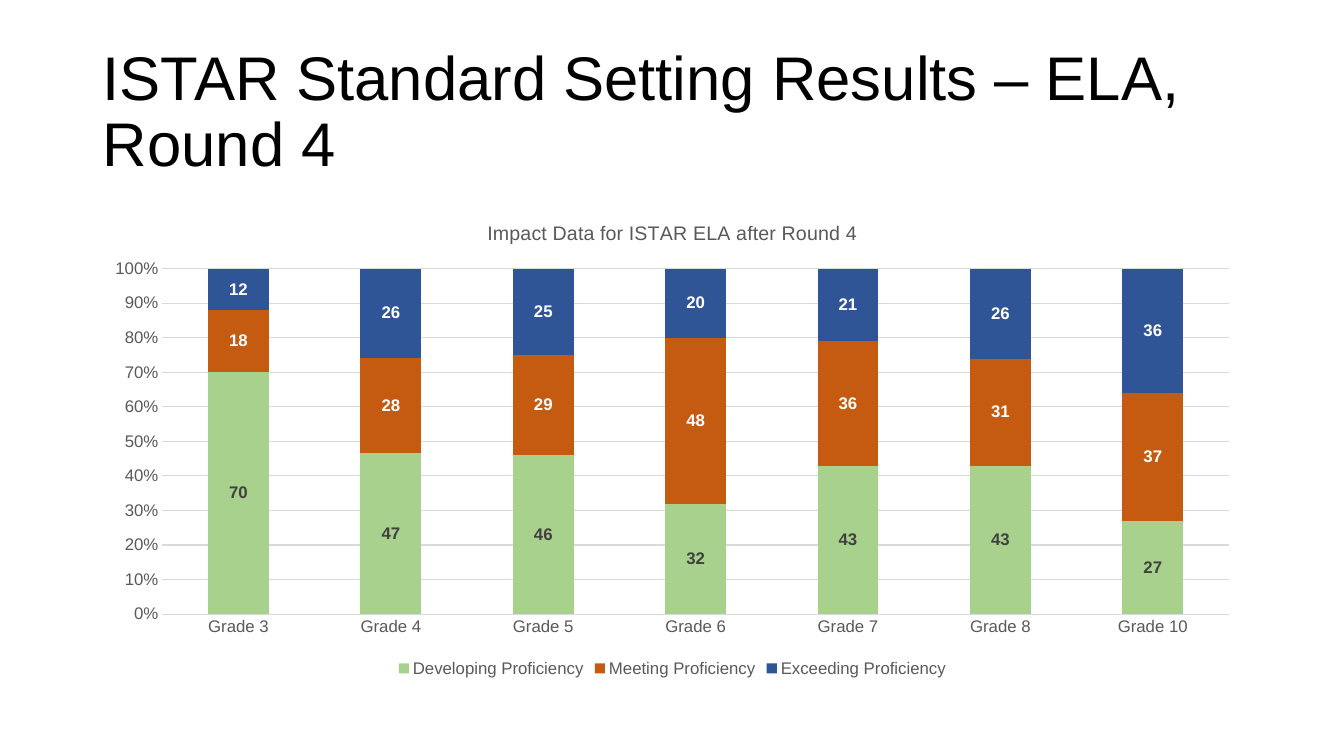
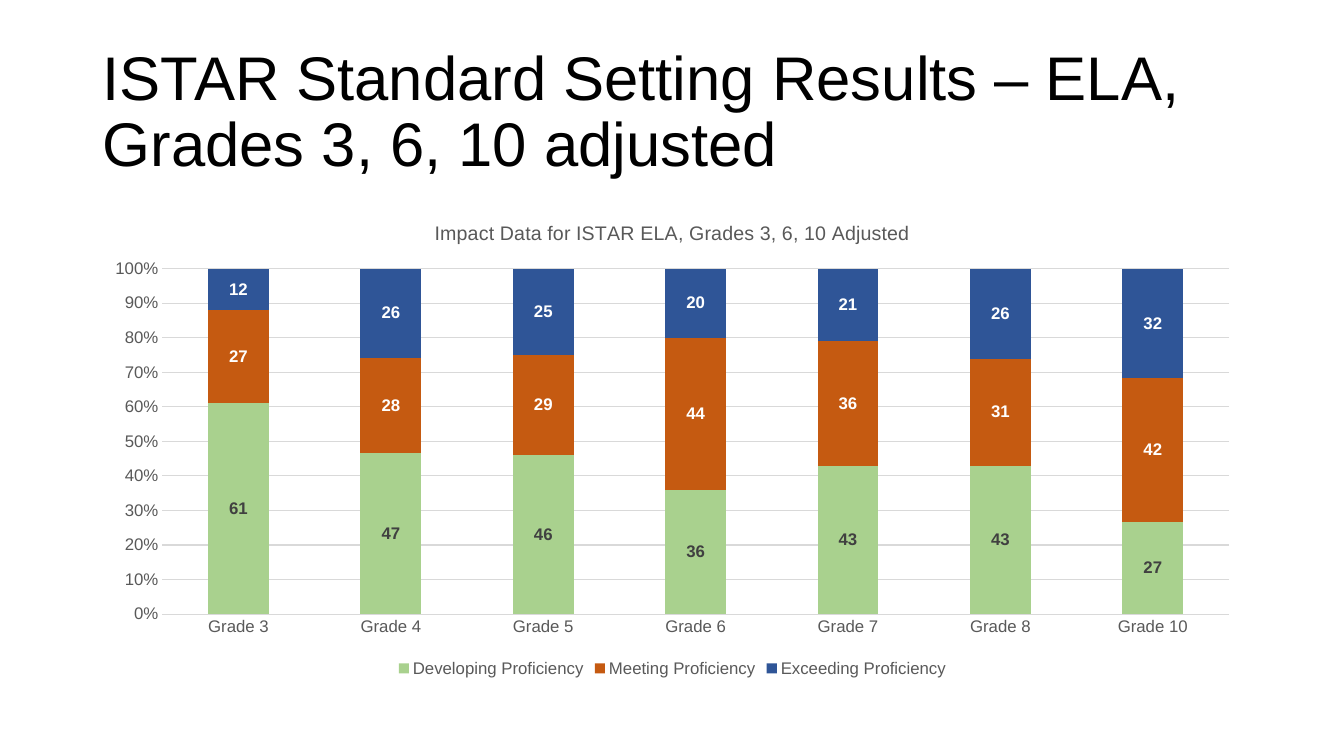
import lxml.etree
import pptx
import pptx.chart.data
import pptx.dml.color
import pptx.enum.chart
import pptx.enum.text
import pptx.oxml.ns
import pptx.util

Inches = pptx.util.Inches
Pt = pptx.util.Pt
RGBColor = pptx.dml.color.RGBColor

FONT = "Arial"
BLACK = RGBColor(0x00, 0x00, 0x00)
WHITE = RGBColor(0xFF, 0xFF, 0xFF)
DARK_GRAY = RGBColor(0x40, 0x40, 0x40)
TEXT_GRAY = RGBColor(0x59, 0x59, 0x59)
LINE_GRAY = RGBColor(0xD9, 0xD9, 0xD9)
GREEN = RGBColor(0xA9, 0xD1, 0x8E)
ORANGE = RGBColor(0xC5, 0x5A, 0x11)
BLUE = RGBColor(0x2F, 0x55, 0x97)

LEFT, WIDTH = Inches(0.92), Inches(11.5)
GRADES = [f"Grade {grade}" for grade in (3, 4, 5, 6, 7, 8, 10)]
LEVELS = [  # name, fill colour, label colour
    ("Developing Proficiency", GREEN, DARK_GRAY),
    ("Meeting Proficiency", ORANGE, WHITE),
    ("Exceeding Proficiency", BLUE, WHITE),
]
RESULTS = [  # slide title, chart title, values by level
    (
        "ISTAR Standard Setting Results – ELA, Round 4",
        "Impact Data for ISTAR ELA after Round 4",
        [
            (70, 47, 46, 32, 43, 43, 27),
            (18, 28, 29, 48, 36, 31, 37),
            (12, 26, 25, 20, 21, 26, 36),
        ],
    ),
    (
        "ISTAR Standard Setting Results – ELA, Grades 3, 6, 10 adjusted",
        "Impact Data for ISTAR ELA, Grades 3, 6, 10 Adjusted",
        [
            (61, 47, 46, 36, 43, 43, 27),
            (27, 28, 29, 44, 36, 31, 42),
            (12, 26, 25, 20, 21, 26, 32),
        ],
    ),
]


def set_font(font, size, color, bold=False):
    font.name = FONT
    font.size = Pt(size)
    font.color.rgb = color
    font.bold = bold


def place_plot(chart, **fractions):
    """Fix the inner plot area at fractions (x, y, w, h) of the chart."""
    qn = pptx.oxml.ns.qn
    plot_area = chart.plots[0]._element.getparent()
    for old_layout in plot_area.findall(qn("c:layout")):
        plot_area.remove(old_layout)
    layout = lxml.etree.Element(qn("c:layout"))
    manual = lxml.etree.SubElement(layout, qn("c:manualLayout"))
    settings = {"layoutTarget": "inner", "xMode": "edge", "yMode": "edge", **fractions}
    for name, value in settings.items():
        lxml.etree.SubElement(manual, qn(f"c:{name}")).set("val", str(value))
    plot_area.insert(0, layout)


presentation = pptx.Presentation()
presentation.slide_width = Inches(13.33)
presentation.slide_height = Inches(7.5)
title_only = presentation.slide_layouts[5]

for slide_title, chart_title, values_by_level in RESULTS:
    slide = presentation.slides.add_slide(title_only)

    title = slide.shapes.title
    title.left, title.top, title.width, title.height = LEFT, Inches(0.4), WIDTH, Inches(1.45)
    title.text_frame.word_wrap = True
    title.text_frame.auto_size = pptx.enum.text.MSO_AUTO_SIZE.NONE
    title.text_frame.vertical_anchor = pptx.enum.text.MSO_ANCHOR.MIDDLE
    paragraph = title.text_frame.paragraphs[0]
    paragraph.alignment = pptx.enum.text.PP_ALIGN.LEFT
    paragraph.line_spacing = 0.9
    run = paragraph.add_run()
    run.text = slide_title
    set_font(run.font, 44, BLACK)

    chart_data = pptx.chart.data.CategoryChartData(number_format="0")
    chart_data.categories = GRADES
    for (level, _, _), values in zip(LEVELS, values_by_level):
        chart_data.add_series(level, values)
    chart = slide.shapes.add_chart(
        pptx.enum.chart.XL_CHART_TYPE.COLUMN_STACKED_100,
        LEFT, Inches(2), WIDTH, Inches(4.76), chart_data,
    ).chart
    set_font(chart.font, 10, BLACK)

    chart.has_title = True
    chart.chart_title.include_in_layout = False
    run = chart.chart_title.text_frame.paragraphs[0].add_run()
    run.text = chart_title
    set_font(run.font, 14, TEXT_GRAY)

    chart.has_legend = True
    chart.legend.position = pptx.enum.chart.XL_LEGEND_POSITION.BOTTOM
    chart.legend.include_in_layout = False
    set_font(chart.legend.font, 12, TEXT_GRAY)

    for axis in (chart.category_axis, chart.value_axis):
        axis.major_tick_mark = pptx.enum.chart.XL_TICK_MARK.NONE
        axis.minor_tick_mark = pptx.enum.chart.XL_TICK_MARK.NONE
        set_font(axis.tick_labels.font, 12, TEXT_GRAY)
    chart.value_axis.format.line.fill.background()
    chart.value_axis.has_major_gridlines = True
    chart.value_axis.major_unit = 0.1
    chart.value_axis.tick_labels.number_format = "0%"
    chart.value_axis.tick_labels.number_format_is_linked = False
    for line in (chart.category_axis.format.line, chart.value_axis.major_gridlines.format.line):
        line.color.rgb = LINE_GRAY
        line.width = Pt(0.75)

    plot = chart.plots[0]
    plot.gap_width = 150
    plot.overlap = 100
    plot.vary_by_categories = False
    for series, (_, fill_color, label_color) in zip(plot.series, LEVELS):
        series.format.fill.solid()
        series.format.fill.fore_color.rgb = fill_color
        labels = series.data_labels
        labels.show_value = True
        labels.number_format = "0"
        labels.number_format_is_linked = False
        labels.position = pptx.enum.chart.XL_LABEL_POSITION.CENTER
        set_font(labels.font, 12, label_color, bold=True)
    place_plot(chart, x=0.06, y=0.14, w=0.92, h=0.72)

presentation.save("out.pptx")
